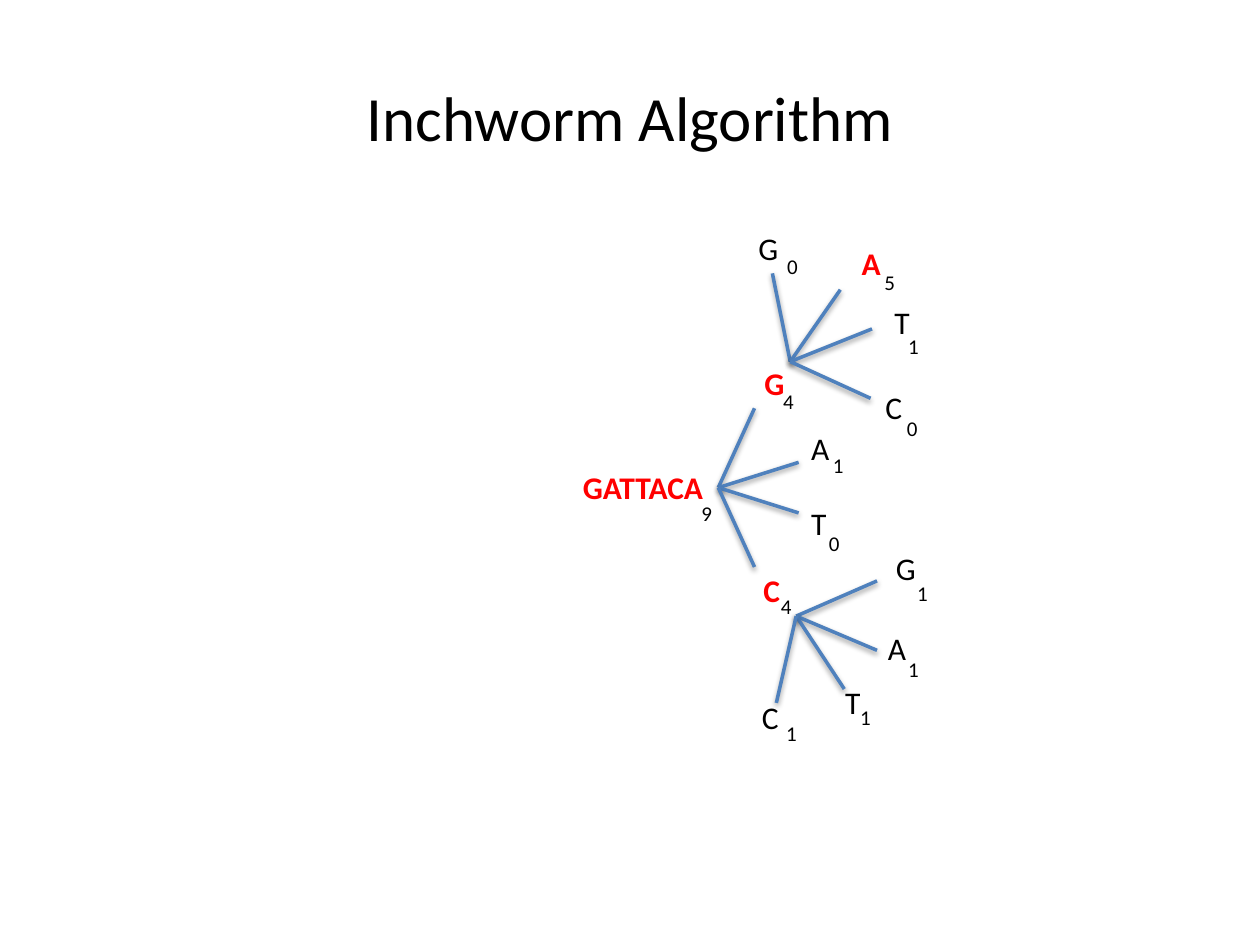
from dataclasses import dataclass
from typing import NamedTuple

from lxml.etree import SubElement
from pptx import Presentation
from pptx.dml.color import RGBColor
from pptx.enum.shapes import MSO_CONNECTOR as Connector
from pptx.enum.text import MSO_ANCHOR as Anchor, MSO_AUTO_SIZE as AutoSize, PP_ALIGN as Align
from pptx.oxml.ns import qn
from pptx.util import Cm, Pt


@dataclass(frozen=True)
class Theme:
    font: str = "Calibri"
    ink: RGBColor = RGBColor(0x00, 0x00, 0x00)
    best: RGBColor = RGBColor(0xFF, 0x00, 0x00)
    branch: RGBColor = RGBColor(0x4F, 0x81, 0xBD)
    title_size: int = 36
    base_size: int = 18
    count_size: int = 12
    branch_width: int = 2


THEME = Theme()


class Box(NamedTuple):
    left: float
    top: float
    width: float
    height: float

    def inner(self, point, size):
        return Box(self.left + point[0], self.top + point[1], *size)


class Node(NamedTuple):
    bases: str
    count: int
    bases_at: tuple
    count_at: tuple
    tip: tuple = None
    best: bool = False


# All lengths are centimetres; tree points are relative to the tree's box
TITLE_BOX = Box(1.27, 0.76, 22.86, 3.18)
TREE_BOX = Box(11.5, 4.5, 7.5, 10.7)
BASES_WIDTH = {"G": 0.91, "A": 0.89, "T": 0.84, "C": 0.86, "GATTACA": 2.97}
BASES_HEIGHT = 1.02
COUNT_SIZE = (0.74, 0.76)

SEED = Node("GATTACA", 9, (0, 4.82), (2.39, 5.46), best=True)

# Each fan: the hub its branches leave from, and the four possible next bases
FANS = [
    ((2.98, 5.33), [
        Node("G", 4, (3.66, 2.71), (4.04, 3.2), (3.71, 3.73), best=True),
        Node("A", 1, (4.6, 4.03), (5.04, 4.49), (4.6, 4.82)),
        Node("T", 0, (4.6, 5.53), (4.96, 6.07), (4.6, 5.84)),
        Node("C", 4, (3.64, 6.88), (3.99, 7.34), (3.71, 6.93), best=True),
    ]),
    ((4.43, 2.79), [
        Node("G", 0, (3.54, 0), (4.12, 0.48), (4.07, 1.01)),
        Node("A", 5, (5.62, 0.3), (6.08, 0.81), (5.44, 1.34), best=True),
        Node("T", 1, (6.28, 1.49), (6.56, 2.1), (6.08, 2.13)),
        Node("C", 0, (6.1, 3.2), (6.53, 3.76), (6.05, 3.53)),
    ]),
    ((4.55, 7.92), [
        Node("G", 1, (6.31, 6.45), (6.74, 7.08), (6.18, 7.21)),
        Node("A", 1, (6.15, 8.05), (6.56, 8.61), (6.18, 8.61)),
        Node("T", 1, (5.29, 9.14), (5.59, 9.57), (5.52, 9.39)),
        Node("C", 1, (3.61, 9.44), (4.1, 9.9), (4.15, 9.67)),
    ]),
]


def add_text(slide, box, text, size, color=THEME.ink, bold=False):
    frame = slide.shapes.add_textbox(*map(Cm, box)).text_frame
    frame.text = text
    frame.word_wrap = False
    frame.auto_size = AutoSize.SHAPE_TO_FIT_TEXT
    font = frame.paragraphs[0].runs[0].font
    font.name, font.size, font.bold = THEME.font, Pt(size), bold
    font.color.rgb = color
    return frame


def add_soft_shadow(connector):
    effects = SubElement(connector._element.spPr, qn("a:effectLst"))
    shadow = SubElement(effects, qn("a:outerShdw"), blurRad="40000", dist="20000",
                        dir="5400000", rotWithShape="0")
    black = SubElement(shadow, qn("a:srgbClr"), val="000000")
    SubElement(black, qn("a:alpha"), val="38000")


def add_branch(slide, box, hub, tip):
    ends = [Cm(offset + origin) for point in (hub, tip)
            for offset, origin in zip(point, (box.left, box.top))]
    branch = slide.shapes.add_connector(Connector.STRAIGHT, *ends)
    branch.line.color.rgb = THEME.branch
    branch.line.width = Pt(THEME.branch_width)
    add_soft_shadow(branch)


def add_node(slide, box, node):
    color = THEME.best if node.best else THEME.ink
    bases_size = (BASES_WIDTH[node.bases], BASES_HEIGHT)
    add_text(slide, box.inner(node.bases_at, bases_size), node.bases,
             THEME.base_size, color, node.best)
    add_text(slide, box.inner(node.count_at, COUNT_SIZE), str(node.count), THEME.count_size)


def add_title(slide, box):
    frame = add_text(slide, box, "Inchworm Algorithm", THEME.title_size)
    frame.word_wrap = True
    frame.auto_size = AutoSize.NONE
    frame.vertical_anchor = Anchor.MIDDLE
    frame.paragraphs[0].alignment = Align.CENTER


def add_extension_tree(slide, box):
    add_node(slide, box, SEED)
    for hub, choices in FANS:
        for node in choices:
            add_branch(slide, box, hub, node.tip)
            add_node(slide, box, node)


def main():
    deck = Presentation()
    deck.slide_width, deck.slide_height = Cm(25.4), Cm(19.05)
    slide = deck.slides.add_slide(deck.slide_layouts[6])
    add_extension_tree(slide, TREE_BOX)
    add_title(slide, TITLE_BOX)
    deck.save("out.pptx")


if __name__ == "__main__":
    main()
